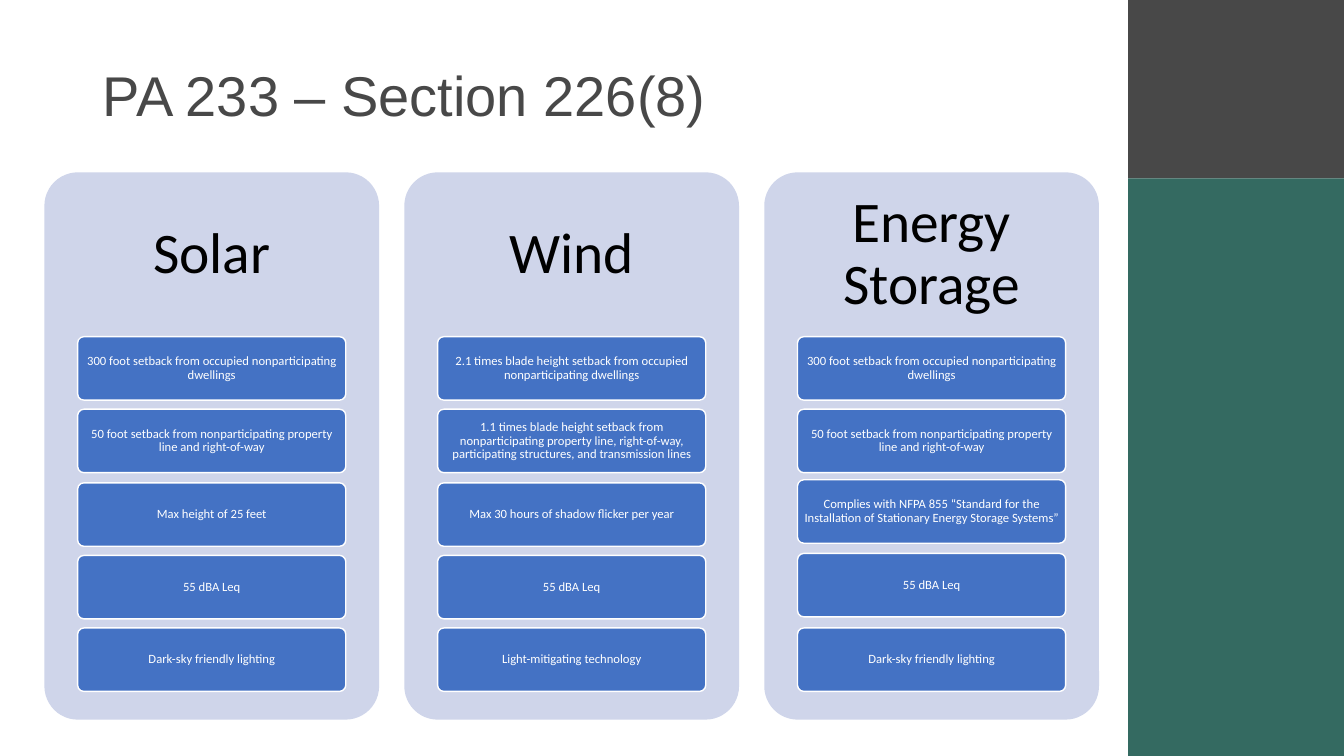
from pptx import Presentation
from pptx.dml.color import RGBColor
from pptx.enum import shapes, text
from pptx.util import Inches, Pt

MIDDLE, CENTER, LEFT = text.MSO_ANCHOR.MIDDLE, text.PP_ALIGN.CENTER, text.PP_ALIGN.LEFT
RECT, ROUNDED = shapes.MSO_SHAPE.RECTANGLE, shapes.MSO_SHAPE.ROUNDED_RECTANGLE


def add_block(kind, left, top, width, height, fill, line=None):
    block = slide.shapes.add_shape(kind, *map(Inches, (left, top, width, height)))
    block.shadow.inherit = False
    block.fill.solid()
    block.fill.fore_color.rgb = RGBColor.from_string(fill)
    if kind == ROUNDED:
        block.adjustments[0] = 0.1
    if line:
        block.line.color.rgb = RGBColor.from_string(line)
        block.line.width = Pt(1)
    else:
        block.line.fill.background()
    return block


def write(holder, wording, size, font, color, align, inset_x, inset_y):
    """Fill a shape with one vertically centred paragraph; insets in inches."""
    frame = holder.text_frame
    frame.text = wording
    frame_format = {
        "word_wrap": True, "auto_size": text.MSO_AUTO_SIZE.NONE, "vertical_anchor": MIDDLE,
        "margin_left": Inches(inset_x), "margin_right": Inches(inset_x),
        "margin_top": Inches(inset_y), "margin_bottom": Inches(inset_y),
    }
    for name, value in frame_format.items():
        setattr(frame, name, value)
    paragraph = frame.paragraphs[0]
    paragraph.alignment = align
    paragraph.line_spacing = 0.9
    run_font = paragraph.runs[0].font
    run_font.size, run_font.name = Pt(size), font
    run_font.color.rgb = RGBColor.from_string(color)


deck = Presentation()
deck.slide_width, deck.slide_height = Inches(13.33), Inches(7.5)
slide = deck.slides.add_slide(deck.slide_layouts[5])

add_block(RECT, 11.19, 0, 2.14, 1.77, "484848")
add_block(RECT, 11.19, 1.77, 2.14, 5.73, "346A61")

title = slide.shapes.title
title_place = {"left": 0.92, "top": 0.45, "width": 9.98, "height": 1.05}
for side, length in title_place.items():
    setattr(title, side, Inches(length))
write(title, "PA 233 – Section 226(8)", 40, "Arial", "484848", LEFT, 0.1, 0.05)

requirements = {
    "Solar": [
        "300 foot setback from occupied nonparticipating dwellings",
        "50 foot setback from nonparticipating property line and right-of-way",
        "Max height of 25 feet",
        "55 dBA Leq",
        "Dark-sky friendly lighting",
    ],
    "Wind": [
        "2.1 times blade height setback from occupied nonparticipating dwellings",
        "1.1 times blade height setback from nonparticipating property line, right-of-way, "
        "participating structures, and transmission lines",
        "Max 30 hours of shadow flicker per year",
        "55 dBA Leq",
        "Light-mitigating technology",
    ],
    "Energy Storage": [
        "300 foot setback from occupied nonparticipating dwellings",
        "50 foot setback from nonparticipating property line and right-of-way",
        "Complies with NFPA 855 “Standard for the Installation of Stationary Energy Storage Systems”",
        "55 dBA Leq",
        "Dark-sky friendly lighting",
    ],
}
even_tops = [3.34, 4.06, 4.79, 5.51, 6.23]
card_tops = {"Energy Storage": [3.34, 4.06, 4.76, 5.49, 6.23]}

for column, (technology, rules) in enumerate(requirements.items()):
    left = 0.44 + 3.57 * column
    add_block(ROUNDED, left, 1.71, 3.32, 5.43, "CFD5EA")
    heading = slide.shapes.add_textbox(*map(Inches, (left, 1.71, 3.32, 1.63)))
    write(heading, technology, 41, "Calibri", "000000", CENTER, 0.17, 0.17)
    for top, rule in zip(card_tops.get(technology, even_tops), rules):
        card = add_block(ROUNDED, left + 0.33, top, 2.66, 0.63, "4472C4", "FFFFFF")
        write(card, rule, 9, "Calibri", "FFFFFF", CENTER, 0.03, 0.02)

deck.save("out.pptx")
